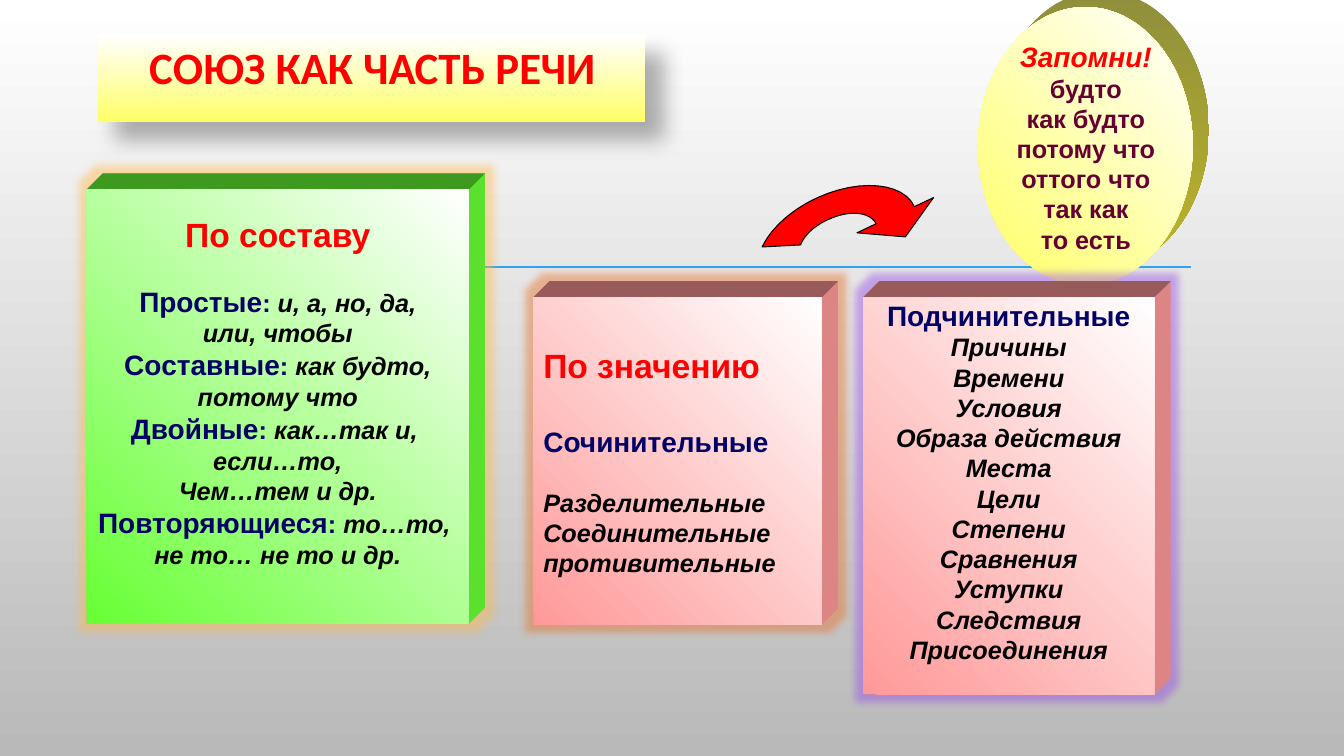
from dataclasses import dataclass

from pptx import Presentation
from pptx.dml.color import RGBColor
from pptx.enum.shapes import MSO_CONNECTOR, MSO_SHAPE
from pptx.enum.text import MSO_ANCHOR, PP_ALIGN
from pptx.oxml import parse_xml
from pptx.oxml.ns import nsdecls, qn
from pptx.util import Inches, Pt

CENTER, LEFT = PP_ALIGN.CENTER, PP_ALIGN.LEFT
MIDDLE = MSO_ANCHOR.MIDDLE
RECTANGLE, OVAL = MSO_SHAPE.RECTANGLE, MSO_SHAPE.OVAL
STRAIGHT = MSO_CONNECTOR.STRAIGHT


@dataclass(frozen=True)
class Theme:
    white: str = "FFFFFF"
    black: str = "000000"
    gray: str = "B9B9B9"
    red: str = "FF0000"
    navy: str = "000066"
    plum: str = "660033"
    blue: str = "2FA3EE"
    yellow: str = "FFFF66"
    olive: str = "8F8F3C"
    gold: str = "BDB52A"
    green: str = "66FF33"
    green_top: str = "3E9A1F"
    green_side: str = "5BE02D"
    pink: str = "FF9999"
    pink_top: str = "985A5A"
    pink_side: str = "DD8585"
    title: int = 32
    heading: int = 24
    term: int = 20
    body: int = 18


theme = Theme()
DEPTH = 0.16
BODY_LINE = 0.29  # height of one body line, inches


def paint(shape, first, last=None, angle=0, effect=None):
    """Fill with one colour or a gradient, without outline, with an optional effect."""
    if last:
        shape.fill.gradient()
        shape.fill.gradient_angle = angle
        for stop, color, position in zip(shape.fill.gradient_stops, (first, last), (0, 1)):
            stop.color.rgb = RGBColor.from_string(color)
            stop.position = position
    else:
        shape.fill.solid()
        shape.fill.fore_color.rgb = RGBColor.from_string(first)
    if hasattr(shape, "line"):
        shape.line.fill.background()
        shape.shadow.inherit = False
    if effect:
        name, attributes, color, alpha = effect
        shape.element.spPr.find(qn("a:effectLst")).append(parse_xml(
            f'<a:{name} {nsdecls("a")} {attributes}><a:srgbClr val="{color}">'
            f'<a:alpha val="{alpha * 1000}"/></a:srgbClr></a:{name}>'))


def write(frame, text, size=theme.body, color=theme.black, italic=False,
          align=CENTER, gap=0, font="Arial", same_line=False):
    """Add a bold span, in a new paragraph unless same_line is set."""
    para = frame.paragraphs[-1]
    if para.runs and not same_line:
        para = frame.add_paragraph()
    para.alignment = align
    if gap:
        para.space_before = Pt(gap)
    span = para.add_run()
    span.text = text
    span.font.name = font
    span.font.size = Pt(size)
    span.font.bold = True
    span.font.italic = italic
    span.font.color.rgb = RGBColor.from_string(color)


deck = Presentation()
deck.slide_width, deck.slide_height = Inches(13.33), Inches(7.5)
page = deck.slides.add_slide(deck.slide_layouts[5])
shapes = page.shapes
paint(page.background, theme.white, theme.gray, 270)

# Horizontal rule
rule = shapes.add_connector(STRAIGHT, Inches(1.53), Inches(2.65), Inches(11.81), Inches(2.65))
rule.line.color.rgb = RGBColor.from_string(theme.blue)
rule.line.width = Pt(1.25)
rule.element.spPr.append(parse_xml(f'<a:effectLst {nsdecls("a")}/>'))

# Title on its plate
plate = shapes.add_shape(RECTANGLE, Inches(0.97), Inches(0.34), Inches(5.43), Inches(0.87))
shadow = f'blurRad="{Pt(15)}" dist="{Pt(18)}" dir="2700000" algn="tl" rotWithShape="0"'
paint(plate, theme.white, theme.yellow, 270, ("outerShdw", shadow, theme.black, 30))
title = shapes.title
plate.element.addnext(title.element)
title.left, title.top, title.width, title.height = map(Inches, (1.09, 0.07, 5.21, 1.25))
title.text_frame.vertical_anchor = MIDDLE
write(title.text_frame, "СОЮЗ КАК ЧАСТЬ РЕЧИ", theme.title, theme.red, font="Calibri")
title.text_frame.paragraphs[0].line_spacing = 0.9

# Reminder disc: the rim lies behind the face
for shift, first, last, angle in ((DEPTH, theme.olive, theme.gold, 270),
                                  (0, theme.yellow, theme.white, 45)):
    disc = shapes.add_shape(OVAL, Inches(9.7 + shift), Inches(0.07 - shift),
                            Inches(2.13), Inches(2.76))
    paint(disc, first, last, angle)
reminder = shapes.add_textbox(Inches(9.97), Inches(0.34), Inches(1.6), Inches(2.24)).text_frame
reminder.word_wrap = True
reminder.margin_left = reminder.margin_right = 0
write(reminder, "Запомни!", theme.term, theme.red, italic=True)
for word in ("будто", "как будто", "потому что", "оттого что", "так как", "то есть"):
    write(reminder, word, color=theme.plum)

# Blocks: glowing silhouette, top side, front face
green = (theme.green, theme.green_top, theme.green_side)
pink = (theme.pink, theme.pink_top, theme.pink_side)
blocks = (
    (0.86, 1.88, 3.79, 4.31, green, "FFB84D"),
    (5.29, 2.95, 2.86, 3.25, pink, "E8702A"),
    (8.56, 2.95, 2.89, 3.94, pink, "9A4DE8"),
)
frames = []
for left, top, width, height, (face, top_color, side_color), glow in blocks:
    right, bottom = left + width, top + height
    upper = [(left, top), (left + DEPTH, top - DEPTH), (right + DEPTH, top - DEPTH)]
    silhouette = upper + [(right + DEPTH, bottom - DEPTH), (right, bottom), (left, bottom)]
    halo = ("glow", f'rad="{Pt(11)}"', glow, 45)
    for outline, color, effect in ((silhouette, side_color, halo),
                                   (upper + [(right, top)], top_color, None)):
        points = [(Inches(x), Inches(y)) for x, y in outline]
        builder = shapes.build_freeform(*points[0])
        builder.add_line_segments(points[1:])
        paint(builder.convert_to_shape(), color, effect=effect)
    front = shapes.add_shape(RECTANGLE, *map(Inches, (left, top, width, height)))
    paint(front, face, theme.white, 45)
    front.text_frame.word_wrap = True
    front.text_frame.vertical_anchor = MIDDLE
    frames.append(front.text_frame)
structure, meaning, subordinate = frames

# By structure
structure.margin_bottom = Inches(0.05 + BODY_LINE)
write(structure, "По составу", theme.heading, theme.red)
kinds = (
    ("Простые", "и, а, но, да,", ("или, чтобы",)),
    ("Составные", "как будто,", ("потому что",)),
    ("Двойные", "как…так и, ", ("если…то,", "Чем…тем и др.")),
    ("Повторяющиеся", "то…то, ", ("не то… не то и др.",)),
)
for index, (kind, examples, more) in enumerate(kinds):
    write(structure, kind, theme.term, theme.navy, gap=0 if index else 21)
    write(structure, ": ", color=theme.navy, same_line=True)
    write(structure, examples, italic=True, same_line=True)
    for line in more:
        write(structure, line, italic=True)

# By meaning: coordinating
write(meaning, "По значению", theme.heading, theme.red, align=LEFT)
write(meaning, "Сочинительные", theme.term, theme.navy, align=LEFT, gap=28)
for index, group in enumerate(("Разделительные", "Соединительные", "противительные")):
    write(meaning, group, italic=True, align=LEFT, gap=0 if index else 21)

# By meaning: subordinating
subordinate.margin_bottom = Inches(0.05 + BODY_LINE)
write(subordinate, "Подчинительные", theme.term, theme.navy)
for group in ("Причины", "Времени", "Условия", "Образа действия", "Места", "Цели",
              "Степени", "Сравнения", "Уступки", "Следствия", "Присоединения"):
    write(subordinate, group, italic=True)

# Curved arrow: every piece is a cubic curve (three points) or a line (one point)
arrow_start = (8.69, 2.22)
arrow_pieces = (
    ((8.63, 2.1), (8.42, 2.08), (8.21, 2.18)),
    ((8.08, 2.24), (7.98, 2.33), (7.94, 2.43)),
    ((7.56, 2.45),),
    ((7.65, 2.26), (7.85, 2.08), (8.11, 1.96)),
    ((8.53, 1.77), (8.96, 1.81), (9.07, 2.05)),
    ((9.26, 1.96),), ((8.98, 2.35),), ((8.5, 2.31),),
)
STEPS = 12
arrow_points = [arrow_start]
for piece in arrow_pieces:
    if len(piece) == 3:
        curve = (arrow_points[-1], *piece)
        for step in range(1, STEPS):
            t = step / STEPS
            weights = ((1 - t) ** 3, 3 * t * (1 - t) ** 2, 3 * t ** 2 * (1 - t), t ** 3)
            arrow_points.append(tuple(sum(weight * point[axis] for weight, point
                                          in zip(weights, curve)) for axis in (0, 1)))
    arrow_points.append(piece[-1])
builder = shapes.build_freeform(*map(Inches, arrow_start))
builder.add_line_segments([(Inches(x), Inches(y)) for x, y in arrow_points[1:]])
arrow = builder.convert_to_shape()
paint(arrow, theme.red)
arrow.line.color.rgb = RGBColor.from_string(theme.black)
arrow.line.width = Pt(0.75)

deck.save("out.pptx")
